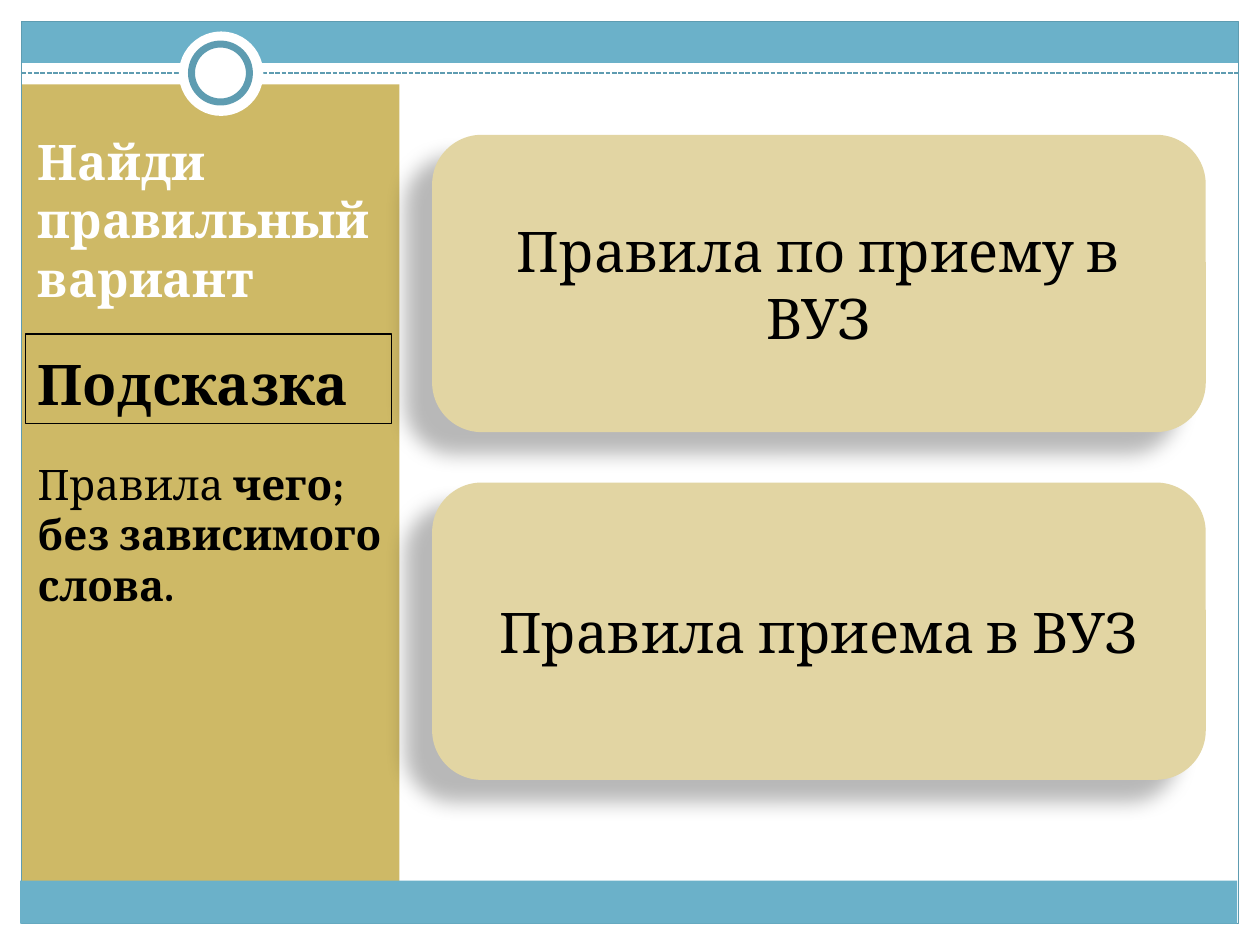
from lxml import etree
from pptx import Presentation
from pptx.dml.color import RGBColor
from pptx.enum.dml import MSO_LINE
from pptx.enum.shapes import MSO_CONNECTOR, MSO_SHAPE
from pptx.enum.text import MSO_ANCHOR, MSO_AUTO_SIZE, PP_ALIGN
from pptx.oxml.ns import qn
from pptx.util import Inches, Pt

RECT, ROUND, OVAL = MSO_SHAPE.RECTANGLE, MSO_SHAPE.ROUNDED_RECTANGLE, MSO_SHAPE.OVAL
TOP, MIDDLE, BOTTOM = MSO_ANCHOR.TOP, MSO_ANCHOR.MIDDLE, MSO_ANCHOR.BOTTOM
LEFT, CENTER = PP_ALIGN.LEFT, PP_ALIGN.CENTER
WHITE = RGBColor(0xFF, 0xFF, 0xFF)
BLACK = RGBColor(0, 0, 0)
BLUE = RGBColor(0x6B, 0xB1, 0xC9)
DARK_BLUE = RGBColor(0x5E, 0x9C, 0xB1)
GOLD = RGBColor(0xCE, 0xB9, 0x66)
SAND = RGBColor(0xE2, 0xD5, 0xA3)
FONT = "Cambria"

# Content: each paragraph is a list of (text, bold) runs
TITLE = [[("Найди правильный вариант", True)]]
HINT_LABEL = [[("Подсказка", True)]]
HINT = [
    [("Правила", False), (" чего;", True)],
    [("без зависимого слова.", True)],
]
ANSWERS = ["Правила по приему в ВУЗ", "Правила приема в ВУЗ"]

# Frame: shape, (left, top, width, height), fill, line colour, line width
FRAME = [
    (RECT, (0.17, 0.17, 9.66, 0.33), BLUE, None, 0),
    (RECT, (0.17, 0.67, 3, 6.42), GOLD, None, 0),
    (RECT, (0.17, 0.17, 9.66, 7.16), None, DARK_BLUE, 0.75),
]
RING = [
    (OVAL, (1.42, 0.25, 0.67, 0.67), WHITE, None, 0),
    (OVAL, (1.52, 0.35, 0.46, 0.46), WHITE, DARK_BLUE, 4),
    (RECT, (0.16, 6.99, 9.66, 0.34), BLUE, None, 0),
]
CARD_LEFT, CARD_TOP, CARD_W, CARD_H, CARD_GAP = 3.43, 1.07, 6.14, 2.36, 0.4


def add_box(s, kind, box, fill=None, line=None, width=0):
    sp = s.shapes.add_shape(kind, *map(Inches, box))
    sp.shadow.inherit = False
    if fill is None:
        sp.fill.background()
    else:
        sp.fill.solid()
        sp.fill.fore_color.rgb = fill
    if line is None:
        sp.line.fill.background()
    else:
        sp.line.color.rgb = line
        sp.line.width = Pt(width)
    return sp


def write(sp, paragraphs, size, color=BLACK, align=LEFT, anchor=TOP, after=0):
    tf = sp.text_frame
    tf.word_wrap = True
    tf.auto_size = MSO_AUTO_SIZE.NONE
    tf.vertical_anchor = anchor
    for i, runs in enumerate(paragraphs):
        p = tf.paragraphs[0] if i == 0 else tf.add_paragraph()
        p.alignment = align
        p.space_after = Pt(after)
        for text, bold in runs:
            r = p.add_run()
            r.text = text
            r.font.name = FONT
            r.font.size = Pt(size)
            r.font.bold = bold
            r.font.color.rgb = color


def add_shadow(sp):
    effects = sp.element.spPr.find(qn("a:effectLst"))
    shadow = etree.SubElement(
        effects, qn("a:outerShdw"), blurRad=str(Pt(11.8)), dist=str(Pt(19.7)),
        dir=str(141 * 60000), algn="ctr", rotWithShape="0")
    color = etree.SubElement(shadow, qn("a:srgbClr"), val=str(BLACK))
    etree.SubElement(color, qn("a:alpha"), val="28000")


def main():
    prs = Presentation()
    prs.slide_width, prs.slide_height = Inches(10), Inches(7.5)
    s = prs.slides.add_slide(prs.slide_layouts[5])

    # Frame, dashed rule and ring
    for part in FRAME:
        add_box(s, *part)
    rule = s.shapes.add_connector(
        MSO_CONNECTOR.STRAIGHT, Inches(0.17), Inches(0.58), Inches(9.83), Inches(0.58))
    rule.line.color.rgb = DARK_BLUE
    rule.line.width = Pt(0.9)
    rule.line.dash_style = MSO_LINE.SQUARE_DOT
    etree.SubElement(rule.element.spPr, qn("a:effectLst"))
    for part in RING:
        add_box(s, *part)

    # Answer cards
    for i, answer in enumerate(ANSWERS):
        top = CARD_TOP + i * (CARD_H + CARD_GAP)
        card = add_box(s, ROUND, (CARD_LEFT, top, CARD_W, CARD_H), SAND)
        add_shadow(card)
        write(card, [[(answer, False)]], 32, align=CENTER, anchor=MIDDLE)

    # Hint label
    label = add_box(s, RECT, (0.2, 2.65, 2.91, 0.71), line=BLACK, width=0.75)
    write(label, HINT_LABEL, 32, anchor=BOTTOM)

    # Title, raised above the side panel
    title = s.shapes.title
    title.left, title.top, title.width, title.height = map(Inches, (0.2, 0.99, 2.91, 1.97))
    write(title, TITLE, 28, WHITE, after=10)
    title.element.getparent().append(title.element)

    # Hint text
    hint = s.shapes.add_textbox(*map(Inches, (0.2, 3.59, 2.99, 1.31)))
    write(hint, HINT, 24)

    prs.save("out.pptx")


if __name__ == "__main__":
    main()
